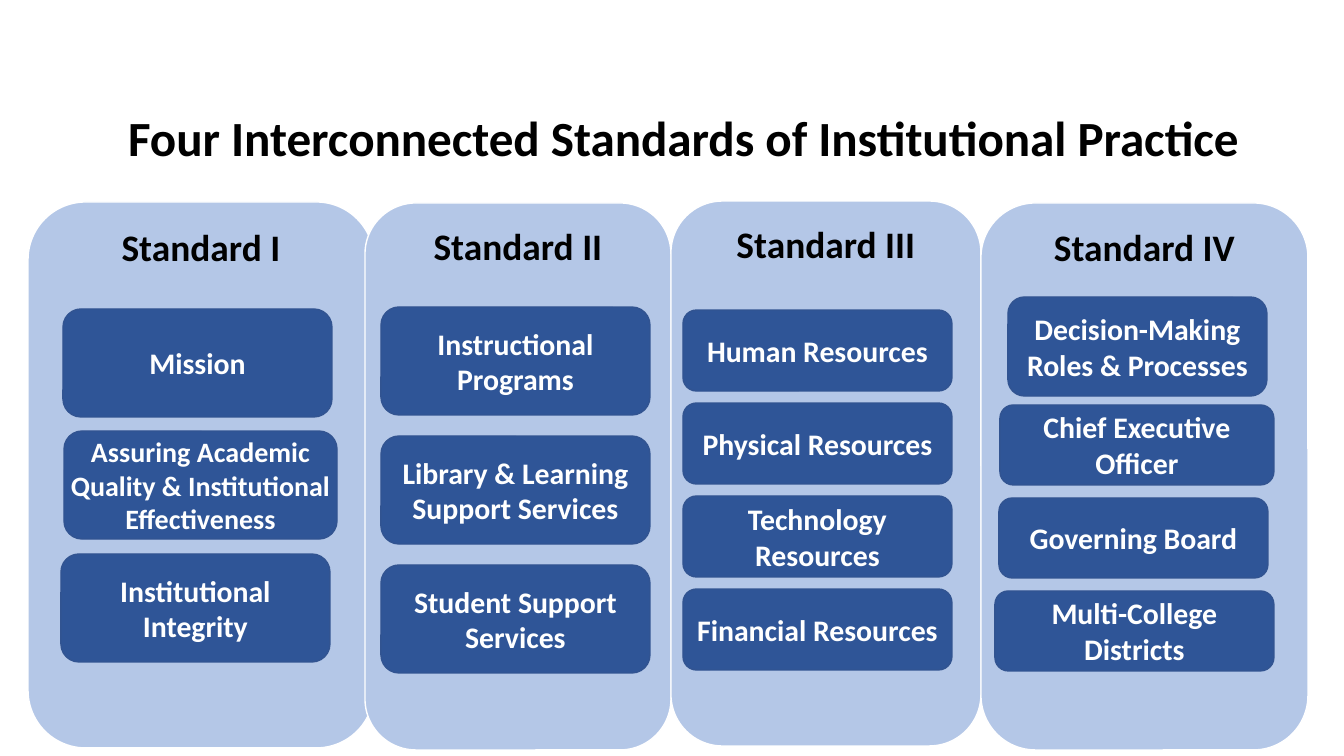
from pptx import Presentation
from pptx.dml.color import RGBColor
from pptx.enum.shapes import MSO_SHAPE
from pptx.enum.text import MSO_ANCHOR, PP_ALIGN
from pptx.util import Pt

ROUNDED = MSO_SHAPE.ROUNDED_RECTANGLE
TOP, MIDDLE = MSO_ANCHOR.TOP, MSO_ANCHOR.MIDDLE
CENTER = PP_ALIGN.CENTER
PX = 914400 / 100.8
COLORS = {"panel": "B4C7E7", "panel_line": "FFFFFF", "topic": "2F5597",
          "topic_line": "325491", "dark": "000000", "light": "FFFFFF"}
TITLE = "Four Interconnected Standards of Institutional Practice"
TITLE_BOX = (104, 108, 1159, 66)
TOPIC_SIZE = 21.3

# Panels are (left, top, width, height); topics are (text, left, width);
# tops and heights run down each column.
STANDARDS = [
    {"name": "Standard I", "panel": (28, 202, 346, 546),
     "tops": (309, 431, 554), "heights": (108,) * 3,
     "topics": [("Mission", 63, 269),
                ("Assuring Academic Quality & Institutional Effectiveness", 64, 273),
                ("Institutional Integrity", 61, 269)]},
    {"name": "Standard II", "panel": (365, 203, 306, 547),
     "tops": range(307, 600, 129), "heights": (108,) * 3,
     "topics": [("Instructional Programs", 381, 269),
                ("Library & Learning Support Services", 381, 269),
                ("Student Support Services", 381, 269)]},
    {"name": "Standard III", "panel": (671, 201, 310, 545),
     "tops": range(310, 600, 93), "heights": (81,) * 4,
     "topics": [("Human Resources", 683, 269),
                ("Physical Resources", 683, 269),
                ("Technology Resources", 683, 269),
                ("Financial Resources", 683, 269)]},
    {"name": "Standard IV", "panel": (981, 203, 327, 547),
     "tops": (297, 405, 498, 591), "heights": (99, 80, 80, 80),
     "topics": [("Decision-Making Roles & Processes", 1008, 259),
                ("Chief Executive Officer", 1000, 274),
                ("Governing Board", 999, 269),
                ("Multi-College Districts", 995, 279)]},
]
SMALLER_TOPICS = {"Assuring Academic Quality & Institutional Effectiveness": 20}


def emu(box):
    return [round(length * PX) for length in box]


def write(shape, text, size, color, anchor):
    frame = shape.text_frame
    frame.word_wrap = True
    frame.vertical_anchor = anchor
    paragraph = frame.paragraphs[0]
    paragraph.alignment = CENTER
    run = paragraph.add_run()
    run.text = text
    for name, value in {"name": "Calibri", "size": Pt(size), "bold": True}.items():
        setattr(run.font, name, value)
    run.font.color.rgb = RGBColor.from_string(COLORS[color])
    return frame


def add_rounded(slide, box, kind):
    shape = slide.shapes.add_shape(ROUNDED, *emu(box))
    shape.shadow.inherit = False
    shape.fill.solid()
    shape.fill.fore_color.rgb = RGBColor.from_string(COLORS[kind])
    shape.line.color.rgb = RGBColor.from_string(COLORS[kind + "_line"])
    shape.line.width = Pt(1)
    return shape


def main():
    presentation = Presentation()
    presentation.slide_width, presentation.slide_height = emu((1344, 756))
    slide = presentation.slides.add_slide(presentation.slide_layouts[6])

    for standard in STANDARDS:
        panel = add_rounded(slide, standard["panel"], "panel")
        write(panel, standard["name"], 26.7, "dark", TOP)

    for standard in STANDARDS:
        rows = zip(standard["topics"], standard["tops"], standard["heights"])
        for (text, left, width), top, height in rows:
            topic = add_rounded(slide, (left, top, width, height), "topic")
            size = SMALLER_TOPICS.get(text, TOPIC_SIZE)
            frame = write(topic, text, size, "light", MIDDLE)
            for side in ("left", "top", "right", "bottom"):
                setattr(frame, "margin_" + side, 0)

    title = slide.shapes.add_textbox(*emu(TITLE_BOX))
    frame = write(title, TITLE, 35.1, "dark", MIDDLE)
    frame.paragraphs[0].line_spacing = 0.9
    presentation.save("out.pptx")


if __name__ == "__main__":
    main()
